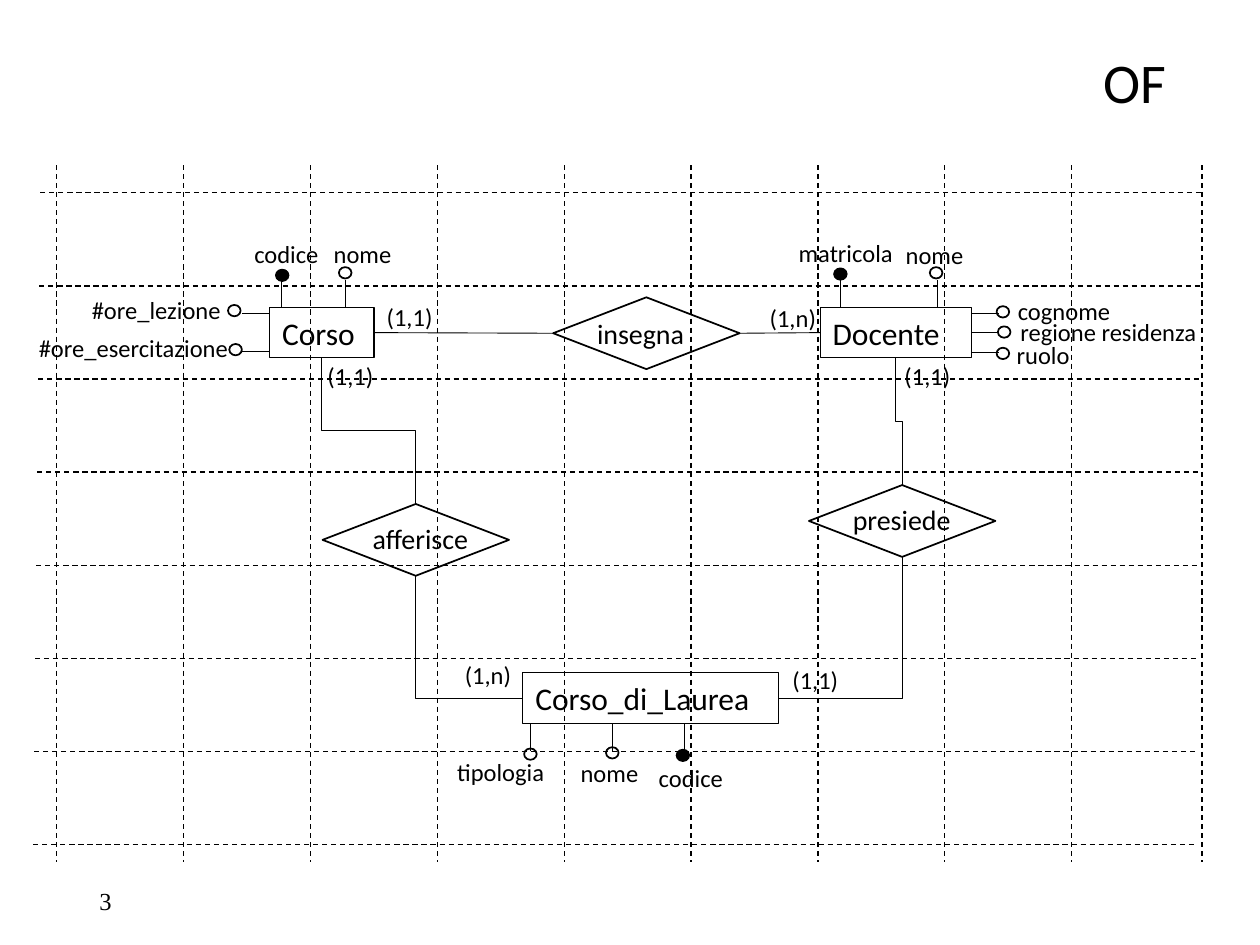
import dataclasses

import lxml.etree
import pptx
import pptx.dml.color
import pptx.enum.dml
import pptx.enum.shapes
import pptx.enum.text
import pptx.oxml.ns
import pptx.util

COLUMNS, ROWS = 100, 75
CELL = pptx.util.Inches(10) // COLUMNS
SHAPES = pptx.enum.shapes.MSO_SHAPE
CONNECTORS = pptx.enum.shapes.MSO_CONNECTOR
ANCHORS = pptx.enum.text.MSO_ANCHOR
ALIGNMENTS = pptx.enum.text.PP_ALIGN
TOP, LEFT, BOTTOM, RIGHT = range(4)


@dataclasses.dataclass(frozen=True)
class Theme:
    ink: pptx.dml.color.RGBColor = pptx.dml.color.RGBColor(0, 0, 0)
    body_font: str = "Calibri"
    number_font: str = "Times New Roman"
    title_size: int = 32
    entity_size: int = 18
    relationship_size: int = 16
    label_size: int = 14
    outline: float = 1
    thin: float = 0.75
    hairline: float = 0.5


@dataclasses.dataclass(frozen=True)
class Box:
    left: float
    top: float
    width: float
    height: float

    def inner(self, left, top, width, height):
        return Box(self.left + left, self.top + top, width, height)

    def lengths(self):
        return [cells(value) for value in dataclasses.astuple(self)]


THEME = Theme()


def cells(count):
    return round(count * CELL)


def apply_format(target, values):
    for name, value in values.items():
        setattr(target, name, value)


def format_line(line, width, dash=None):
    line.color.rgb = THEME.ink
    apply_format(line, {"width": pptx.util.Pt(width), "dash_style": dash})


def write_text(shape, text, size, font=THEME.body_font, anchor=ANCHORS.TOP,
               alignment=ALIGNMENTS.LEFT, spacing=1.0):
    frame = shape.text_frame
    apply_format(frame, {"text": text, "word_wrap": True, "vertical_anchor": anchor})
    paragraph = frame.paragraphs[0]
    apply_format(paragraph, {"alignment": alignment, "line_spacing": spacing})
    run = paragraph.runs[0]
    apply_format(run.font, {"name": font, "size": pptx.util.Pt(size), "bold": False})
    run.font.color.rgb = THEME.ink


def add_label(slide, box, text, size=THEME.label_size, **text_format):
    write_text(slide.shapes.add_textbox(*box.lengths()), text, size, **text_format)


def add_outline(slide, box, preset, width, filled=False):
    shape = slide.shapes.add_shape(preset, *box.lengths())
    shape.shadow.inherit = False
    if filled:
        shape.fill.solid()
        shape.fill.fore_color.rgb = THEME.ink
    else:
        shape.fill.background()
    format_line(shape.line, width)
    return shape


def add_line(slide, start, end, width, kind=CONNECTORS.STRAIGHT, dash=None):
    points = [cells(value) for value in (*start, *end)]
    connector = slide.shapes.add_connector(kind, *points)
    format_line(connector.line, width, dash)
    lxml.etree.SubElement(connector.element.spPr, pptx.oxml.ns.qn("a:effectLst"))
    return connector


def draw_title(slide, box):
    title = slide.shapes.title
    apply_format(title, dict(zip(("left", "top", "width", "height"), box.lengths())))
    write_text(title, "OF", THEME.title_size, anchor=ANCHORS.MIDDLE,
               alignment=ALIGNMENTS.CENTER, spacing=0.9)


def draw_grid(slide, box):
    dash = pptx.enum.dml.MSO_LINE.DASH
    for row in range(8):
        left, top = box.left - 1.3 - 0.08 * row, box.top + 2.2 + 7.39 * row
        add_line(slide, (left, top), (left + 92.1, top), THEME.thin, dash=dash)
    for offset in [10.07 * column for column in range(9)] + [box.width]:
        left = box.left + offset
        add_line(slide, (left, box.top), (left, box.top + box.height), THEME.thin, dash=dash)


def draw_attribute(slide, box, entity, name, side, along, dot, label, width, is_key=False):
    stem = 2.2
    start, step = {
        TOP: ((box.left + along, box.top), (0, -stem)),
        LEFT: ((box.left, box.top + along), (-stem, 0)),
        BOTTOM: ((box.left + along, box.top + box.height), (0, stem)),
        RIGHT: ((box.left + box.width, box.top + along), (stem, 0)),
    }[side]
    connector = add_line(slide, start, (start[0] + step[0], start[1] + step[1]), THEME.hairline)
    extent = box.height if side in (LEFT, RIGHT) else box.width
    if along == extent / 2:
        connector.begin_connect(entity, side)
    add_outline(slide, box.inner(*dot, 1, 0.9), SHAPES.OVAL, THEME.outline, is_key)
    add_label(slide, box.inner(*label, width, 3.4), name)


def draw_entity(slide, box, name, attributes):
    entity = add_outline(slide, box, SHAPES.RECTANGLE, THEME.thin)
    write_text(entity, name, THEME.entity_size)
    for attribute in attributes:
        draw_attribute(slide, box, entity, *attribute)
    return entity


def draw_relationship(slide, box, name, label, width):
    diamond = add_outline(slide, box, SHAPES.DIAMOND, THEME.outline)
    add_label(slide, box.inner(*label, width, 3.7), name, THEME.relationship_size)
    return diamond


def link(slide, first, first_side, second, second_side, preset=None):
    kind = CONNECTORS.ELBOW if preset else CONNECTORS.STRAIGHT
    connector = add_line(slide, (0, 0), (1, 1), THEME.hairline, kind)
    connector.begin_connect(first, first_side)
    connector.end_connect(second, second_side)
    if preset:
        across = connector.end_x - connector.begin_x
        width, height = connector.width, connector.height
        center_x, center_y = connector.left + width // 2, connector.top + height // 2
        apply_format(connector, {"left": center_x - height // 2, "top": center_y - width // 2,
                                 "width": height, "height": width})
        properties = connector.element.spPr
        frame = properties.find(pptx.oxml.ns.qn("a:xfrm"))
        frame.attrib.clear()
        frame.set("rot", str((270 if across > 0 else 90) * 60000))
        if across > 0:
            frame.set("flipH", "1")
        properties.find(pptx.oxml.ns.qn("a:prstGeom")).set("prst", preset)


def draw_diagram(slide, box):
    course = draw_entity(slide, box.inner(16.9, 11.3, 8.3, 4), "Corso", [
        ("codice", TOP, 0.9, (0.5, -3), (-2.2, -5.9), 9.3, True),
        ("nome", TOP, 6, (5.5, -3.2), (4.1, -5.9), 9.3),
        ("#ore_lezione", LEFT, 0.5, (-3.3, -0.2), (-15.1, -1.5), 13.2),
        ("#ore_esercitazione", LEFT, 3.5, (-3.2, 2.9), (-19.3, 1.5), 17.4),
    ])
    teacher = draw_entity(slide, box.inner(60.6, 11.3, 12, 4), "Docente", [
        ("matricola", TOP, 1.6, (1.1, -3.1), (-2.7, -6), 10.7, True),
        ("nome", TOP, 9.3, (8.7, -3.2), (5.8, -5.8), 9.3),
        ("cognome", RIGHT, 0.5, (14, -0.1), (14.7, -1.4), 13.6),
        ("regione residenza", RIGHT, 2, (14.1, 1.5), (14.9, 0.3), 16.8),
        ("ruolo", RIGHT, 3.6, (14, 3.2), (14.6, 2.1), 16.8),
    ])
    degree = draw_entity(slide, box.inner(37, 40.3, 20.3, 4), "Corso_di_Laurea", [
        ("tipologia", BOTTOM, 0.6, (0.1, 6), (-6.2, 6.2), 9.3),
        ("nome", BOTTOM, 7.1, (6.6, 5.9), (3.6, 6.3), 9.3),
        ("codice", BOTTOM, 12.8, (12.2, 6.1), (9.8, 6.7), 9.3, True),
    ])
    teaches, belongs, chairs = [
        draw_relationship(slide, box.inner(left, top, 14.8, 5.7), name, label, width)
        for left, top, name, label, width in [
            (39.4, 10.5, "insegna", (2.5, 1), 9.4),
            (21.1, 26.9, "afferisce", (3, 0.9), 14.3),
            (59.7, 25.4, "presiede", (2.5, 0.9), 14.3),
        ]
    ]
    link(slide, course, RIGHT, teaches, LEFT)
    link(slide, teaches, RIGHT, teacher, LEFT)
    link(slide, course, BOTTOM, belongs, TOP, "bentConnector3")
    link(slide, belongs, BOTTOM, degree, LEFT, "bentConnector2")
    link(slide, teacher, BOTTOM, chairs, TOP, "bentConnector3")
    link(slide, chairs, BOTTOM, degree, RIGHT, "bentConnector2")
    for left, top, cardinality in [
        (20.5, 15.1, "(1,1)"), (31.4, 38.8, "(1,n)"), (55.6, 10.5, "(1,n)"),
        (25.2, 10.4, "(1,1)"), (57.4, 39.2, "(1,1)"), (66.3, 15.1, "(1,1)"),
    ]:
        add_label(slide, box.inner(left, top, 5.8, 3.4), cardinality)


def main():
    presentation = pptx.Presentation()
    apply_format(presentation, {"slide_width": cells(COLUMNS), "slide_height": cells(ROWS)})
    slide = presentation.slides.add_slide(presentation.slide_layouts.get_by_name("Title Only"))
    draw_title(slide, Box(83.2, 2.8, 13.7, 8))
    add_label(slide, Box(6.9, 69.5, 22.5, 4), "3", font=THEME.number_font, anchor=ANCHORS.MIDDLE)
    area = Box(4.5, 13.1, 90.9, 55.3)
    draw_grid(slide, area)
    draw_diagram(slide, area)
    presentation.save("out.pptx")


if __name__ == "__main__":
    main()
